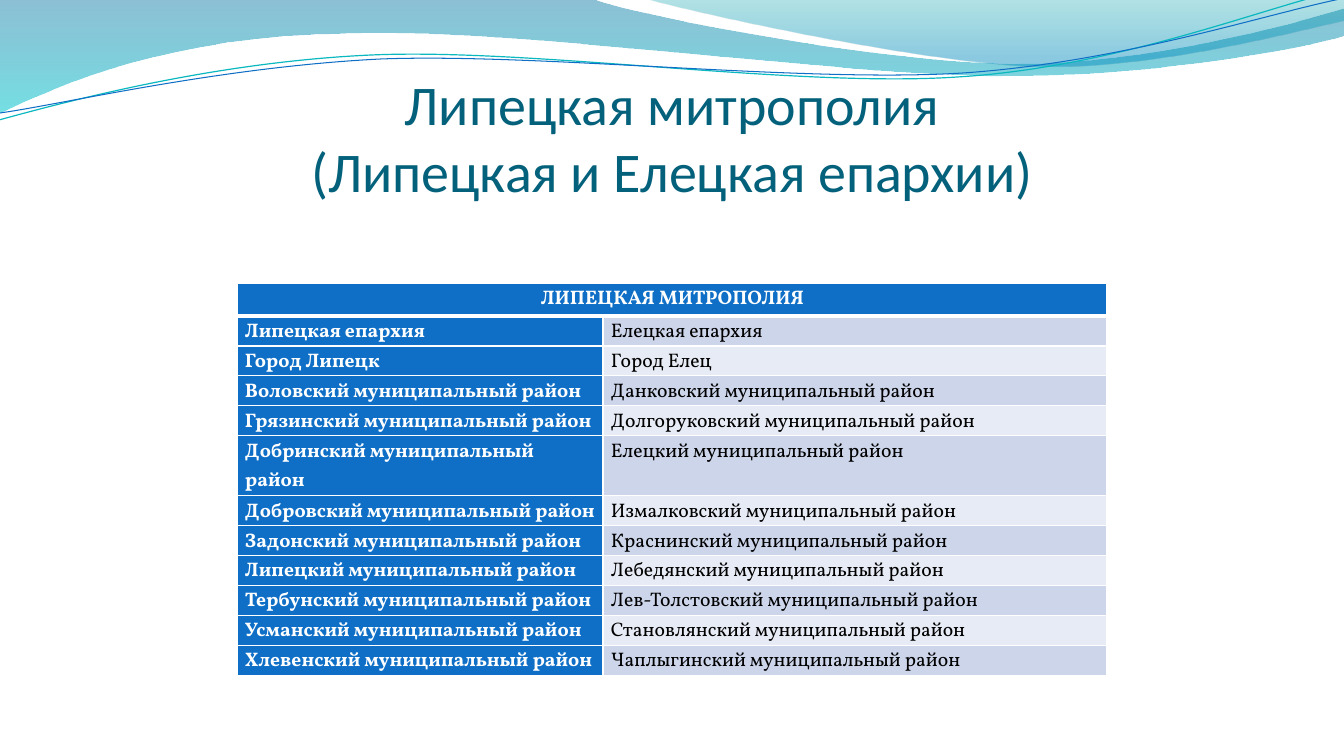
from lxml import etree
from pptx import Presentation
from pptx import util as u
from pptx.dml.color import RGBColor
from pptx.enum import text
from pptx.oxml.ns import qn

SCALE = 914400 / 100.8
HUES = {
    "white": "FFFFFF", "black": "000000", "title": "04617B",
    "blue": "0F6FC6", "odd": "CCD5EA", "even": "E7EBF5",
    "teal": "0AB8BF", "deep": "0074A1", "aqua": "00C6CF",
    "sea": "00A1A9", "sky": "008BBF",
}

# Two numbers draw a straight side, six draw a Bezier curve.
BAND = [(0, 0), (592, -1), (639, 17, 892, 64, 1019, 64),
        (1147, 64, 1288, 26, 1344, 9), (1346, 36),
        (1322, 44, 1169, 77, 1002, 76), (836, 76, 513, 28, 346, 34),
        (173, 36, 61, 84, -1, 114), (0, 0)]
CREST = [(644, -1), (684, 11, 916, 62, 1033, 66),
         (1150, 70, 1292, 32, 1344, 21), (1344, 0), (644, -1)]
TEAL = [(-1, 120), (65, 102, 213, 62, 372, 55),
        (531, 48, 796, 88, 958, 77), (1119, 67, 1262, 8, 1342, -10)]
BLUE = [(0, 113), (64, 104, 220, 67, 381, 59),
        (541, 53, 802, 83, 963, 73), (1124, 62, 1265, 14, 1345, -2)]

TITLE = "Липецкая митрополия\v(Липецкая и Елецкая епархии)"
HEAD = "ЛИПЕЦКАЯ МИТРОПОЛИЯ"
TOP = [("Липецкая епархия", "Елецкая епархия"),
       ("Город Липецк", "Город Елец")]
AREAS = [("Воловский", "Данковский"), ("Грязинский", "Долгоруковский"),
         ("Добринский", "Елецкий"), ("Добровский", "Измалковский"),
         ("Задонский", "Краснинский"), ("Липецкий", "Лебедянский"),
         ("Тербунский", "Лев-Толстовский"), ("Усманский", "Становлянский"),
         ("Хлевенский", "Чаплыгинский")]
TALL = 5


def px(n):
    """Turn pixels into EMU."""
    return u.Emu(round(n * SCALE))


def hue(name):
    """Look up a colour by name."""
    return RGBColor.from_string(HUES[name])


def bend(shape, parts):
    """Join each three sides of a curved part into one Bezier curve."""
    sides = iter(list(shape._element.iter(qn("a:lnTo"))))
    for part in parts[1:]:
        group = [next(sides) for _ in range(len(part) // 2)]
        if len(group) == 3:
            arc = etree.Element(qn("a:cubicBezTo"))
            group[0].addprevious(arc)
            for side in group:
                arc.append(side[0])
                side.getparent().remove(side)


def outline(slide, parts, close):
    """Add a freeform without a shadow."""
    dots = [(px(x), px(y)) for part in parts
            for x, y in zip(part[::2], part[1::2])]
    pen = slide.shapes.build_freeform(*dots[0], scale=1.0)
    pen.add_line_segments(dots[1:], close=close)
    shape = pen.convert_to_shape()
    bend(shape, parts)
    shape.shadow.inherit = False
    return shape


def wave(slide, parts, stops):
    """Add a see-through wave; a stop is colour, place, opacity."""
    shape = outline(slide, parts, True)
    shape.line.fill.background()
    shape.fill.gradient()
    shape.fill.gradient_angle = 270
    for stop, (name, place, _) in zip(shape.fill.gradient_stops, stops):
        stop.color.rgb = hue(name)
        stop.position = place
    tags = shape._element.spPr.iter(qn("a:srgbClr"))
    for tag, (_, _, alpha) in zip(list(tags), stops):
        etree.SubElement(tag, qn("a:alpha")).set("val", str(alpha * 1000))


def curve(slide, parts, name, width):
    """Add a thin open curve."""
    shape = outline(slide, parts, False)
    shape.fill.background()
    shape.line.color.rgb = hue(name)
    shape.line.width = u.Pt(width)


def style(para, font, size, name, bold=False):
    """Format all runs of a paragraph."""
    for run in para.runs:
        run.font.name = font
        run.font.size = u.Pt(size)
        run.font.bold = bold
        run.font.color.rgb = hue(name)


def title(slide):
    """Add the heading."""
    box = slide.shapes.add_textbox(px(67), px(78), px(1210), px(126))
    frame = box.text_frame
    frame.word_wrap = True
    frame.vertical_anchor = text.MSO_ANCHOR.BOTTOM
    frame.margin_left = frame.margin_right = 0
    frame.margin_top = frame.margin_bottom = 0
    frame.text = TITLE
    para = frame.paragraphs[0]
    para.alignment = text.PP_ALIGN.CENTER
    style(para, "Calibri", 40, "title")


def border(cell, thick):
    """Add white borders; the sides named in thick are 3 pt wide."""
    props = cell._tc.get_or_add_tcPr()
    for side in "LRTB":
        line = etree.SubElement(props, qn("a:ln" + side))
        line.set("w", str(u.Pt(3 if side in thick else 1)))
        fill = etree.SubElement(line, qn("a:solidFill"))
        etree.SubElement(fill, qn("a:srgbClr")).set("val", HUES["white"])


def fill_cell(cell, words, back, front, bold, thick):
    """Write and format one table cell."""
    border(cell, thick)
    cell.fill.solid()
    cell.fill.fore_color.rgb = hue(back)
    cell.margin_left, cell.margin_right = px(8), px(7)
    cell.margin_top, cell.margin_bottom = px(1), 0
    cell.text = words
    para = cell.text_frame.paragraphs[0]
    para.line_spacing = 1.06
    style(para, "Vollkorn", 14, front, bold)


def grid(slide):
    """Add the table of the two dioceses."""
    rows = TOP + [tuple(f"{name} муниципальный район" for name in pair)
                  for pair in AREAS]
    high = [33] + [30] * len(rows)
    high[TALL] = 60
    wide = (366, 504)
    table = slide.shapes.add_table(len(high), 2, px(237), px(283),
                                   px(sum(wide)), px(sum(high))).table
    for col, size in zip(table.columns, wide):
        col.width = px(size)
    for row, size in zip(table.rows, high):
        row.height = px(size)
    for c, words in enumerate((HEAD, "")):
        fill_cell(table.cell(0, c), words, "blue", "white", True, "B")
    head = table.cell(0, 0)
    head.merge(table.cell(0, 1))
    head.text_frame.paragraphs[0].alignment = text.PP_ALIGN.CENTER
    for r, (left, right) in enumerate(rows, 1):
        thick = "T" if r == 1 else ""
        band = "odd" if r % 2 else "even"
        fill_cell(table.cell(r, 0), left, "blue", "white", True, thick)
        fill_cell(table.cell(r, 1), right, band, "black", False, thick)


def main():
    """Build the slide and save it."""
    deck = Presentation()
    deck.slide_width, deck.slide_height = px(1344), px(756)
    slide = deck.slides.add_slide(deck.slide_layouts[6])
    wave(slide, BAND, [("deep", 0, 45), ("aqua", 1, 55)])
    wave(slide, CREST, [("sea", 0, 30), ("sky", 0.8, 45)])
    curve(slide, TEAL, "teal", 0.85)
    curve(slide, BLUE, "blue", 0.75)
    title(slide)
    grid(slide)
    deck.save("out.pptx")


main()
